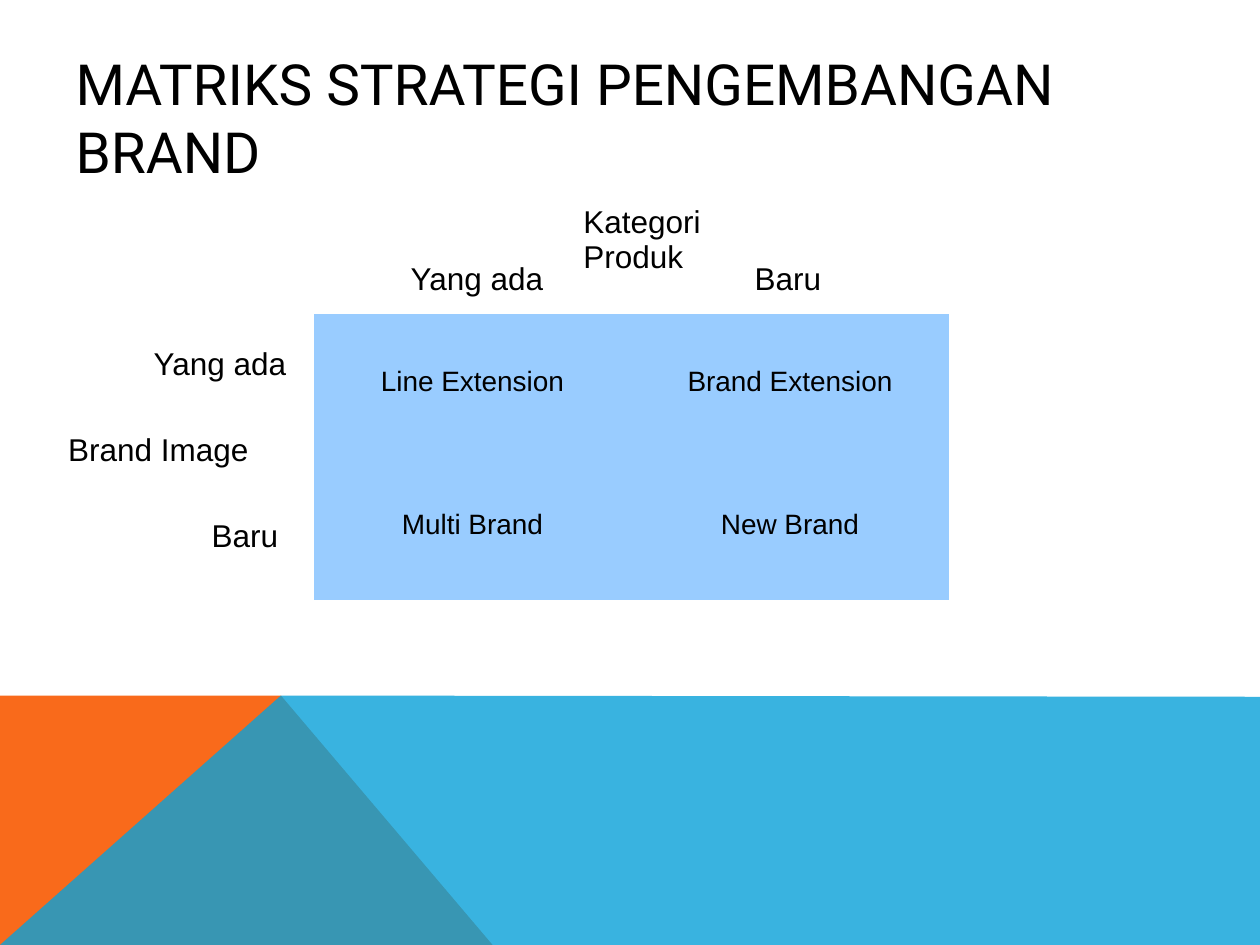
from typing import NamedTuple

from lxml import etree
from pptx import Presentation
from pptx.dml.color import RGBColor
from pptx.enum import text
from pptx.oxml import ns
from pptx.util import Inches, Pt

BLACK = RGBColor(0x00, 0x00, 0x00)
ORANGE = RGBColor(0xF9, 0x6A, 0x1B)
BLUE = RGBColor(0x08, 0xA1, 0xD9)
CELL_BLUE = RGBColor(0x99, 0xCC, 0xFF)

LINE_SPACING = 0.93


class Label(NamedTuple):
    wording: str
    left: float
    top: float
    width: float
    height: float = 0.34


BAND_TOP, BAND_PEAK = 5.52, 2.23
ORANGE_WEDGE = [(0, 7.5), (0, BAND_TOP), (BAND_PEAK, BAND_TOP), (3.91, 7.5)]
BLUE_BAND = [(0, 7.5), (BAND_PEAK, BAND_TOP), (10, 5.53), (10, 7.5)]

STRATEGIES = [
    ["Line Extension", "Brand Extension"],
    ["Multi Brand", "New Brand"],
]

LABELS = [
    Label("Yang ada", 1.13, 2.72, 1.36),
    Label("Baru", 5.9, 2.04, 1.1),
    Label("Yang ada", 3.17, 2.04, 1.36),
    Label("Baru", 1.59, 4.08, 1.36),
    Label("Kategori Produk", 4.54, 1.59, 1.81, 3.06),
    Label("Brand Image", 0.45, 3.4, 1.81),
]


def add_run(paragraph, wording: str, size: float, font: str = "Arial") -> None:
    run = paragraph.add_run()
    run.text = wording
    run.font.size = Pt(size)
    run.font.name = font
    run.font.color.rgb = BLACK


def set_margins(holder, side: float, top: float, bottom: float) -> None:
    holder.margin_left = holder.margin_right = Inches(side)
    holder.margin_top = Inches(top)
    holder.margin_bottom = Inches(bottom)


def add_polygon(slide, points: list, color: RGBColor, opacity: int = 100) -> None:
    corners = [(Inches(x), Inches(y)) for x, y in points]
    builder = slide.shapes.build_freeform(*corners[0])
    builder.add_line_segments(corners[1:], close=True)
    shape = builder.convert_to_shape()
    shape.shadow.inherit = False
    shape.line.fill.background()
    shape.fill.solid()
    shape.fill.fore_color.rgb = color
    if opacity < 100:
        color_element = shape.fill._xPr.find(".//" + ns.qn("a:srgbClr"))
        etree.SubElement(color_element, ns.qn("a:alpha"), val=str(opacity * 1000))


def add_hairline_borders(cell) -> None:
    properties = cell._tc.get_or_add_tcPr()
    for index, side in enumerate(("lnL", "lnR", "lnT", "lnB")):
        border = etree.Element(ns.qn(f"a:{side}"), w="360")
        fill = etree.SubElement(border, ns.qn("a:solidFill"))
        etree.SubElement(fill, ns.qn("a:srgbClr"), val="FFFFFF")
        properties.insert(index, border)


def add_matrix(slide) -> None:
    frame = slide.shapes.add_table(
        2, 2, Inches(2.49), Inches(2.49), Inches(5.04), Inches(2.27))
    table = frame.table
    table.first_row = table.horz_banding = False
    for row, strategies in enumerate(STRATEGIES):
        for column, strategy in enumerate(strategies):
            cell = table.cell(row, column)
            cell.fill.solid()
            cell.fill.fore_color.rgb = CELL_BLUE
            add_hairline_borders(cell)
            set_margins(cell, 0.09, 0.02, 0.05)
            cell.vertical_anchor = text.MSO_ANCHOR.MIDDLE
            paragraph = cell.text_frame.paragraphs[0]
            paragraph.alignment = text.PP_ALIGN.CENTER
            paragraph.line_spacing = LINE_SPACING
            add_run(paragraph, strategy, 16)


def add_label(slide, label: Label) -> None:
    box = slide.shapes.add_textbox(*(Inches(length) for length in label[1:]))
    frame = box.text_frame
    frame.word_wrap = True
    set_margins(frame, 0.09, 0.04, 0.04)
    paragraph = frame.paragraphs[0]
    paragraph.line_spacing = LINE_SPACING
    add_run(paragraph, label.wording, 18)


def format_title(title) -> None:
    title.left, title.top = Inches(0.5), Inches(0.3)
    title.width, title.height = Inches(9), Inches(1.25)
    frame = title.text_frame
    frame.word_wrap = True
    frame.auto_size = text.MSO_AUTO_SIZE.NONE
    frame.vertical_anchor = text.MSO_ANCHOR.MIDDLE
    set_margins(frame, 0.1, 0.06, 0.05)
    paragraph = frame.paragraphs[0]
    paragraph.alignment = text.PP_ALIGN.LEFT
    add_run(paragraph, "MATRIKS STRATEGI PENGEMBANGAN BRAND", 32.4, "Roboto")


def main() -> None:
    presentation = Presentation()
    presentation.slide_width = Inches(10)
    presentation.slide_height = Inches(7.5)
    slide = presentation.slides.add_slide(presentation.slide_layouts[5])

    # Coloured band along the bottom
    add_polygon(slide, ORANGE_WEDGE, ORANGE)
    add_polygon(slide, BLUE_BAND, BLUE, opacity=80)

    # Title, matrix and axis labels
    format_title(slide.shapes.title)
    add_matrix(slide)
    for label in LABELS:
        add_label(slide, label)

    presentation.save("out.pptx")


if __name__ == "__main__":
    main()
